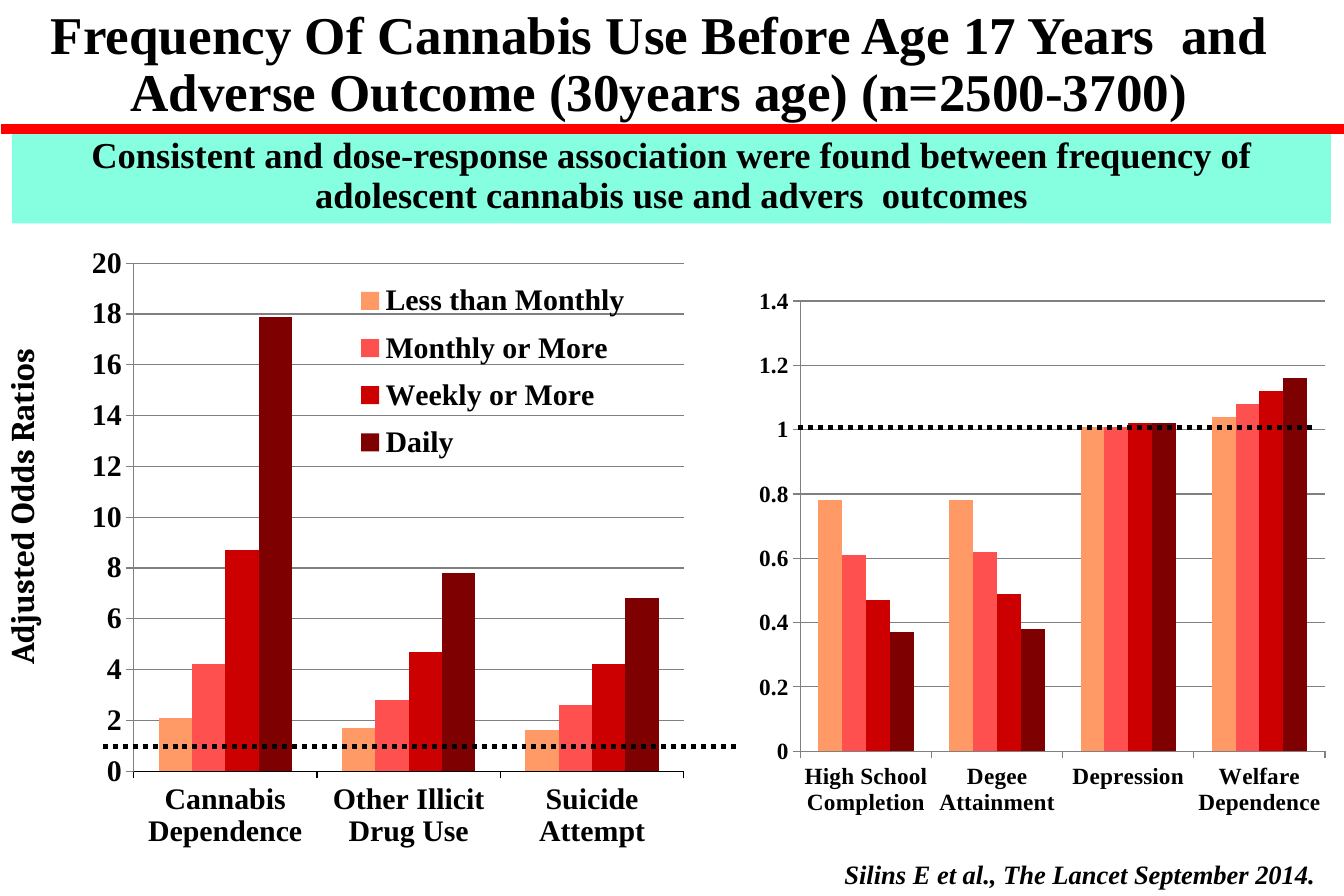
from dataclasses import dataclass

from lxml import etree
from pptx import Presentation
from pptx.chart.data import CategoryChartData
from pptx.dml.color import RGBColor
from pptx.enum.chart import XL_CHART_TYPE, XL_LEGEND_POSITION, XL_TICK_MARK
from pptx.enum.dml import MSO_LINE
from pptx.enum.shapes import MSO_CONNECTOR, MSO_SHAPE
from pptx.enum.text import MSO_ANCHOR, MSO_AUTO_SIZE, PP_ALIGN
from pptx.oxml.ns import qn
from pptx.util import Inches, Pt

COLUMNS = XL_CHART_TYPE.COLUMN_CLUSTERED
LEGEND_TOP = XL_LEGEND_POSITION.TOP
TICK_OUTSIDE = XL_TICK_MARK.OUTSIDE
DOTTED = MSO_LINE.ROUND_DOT
STRAIGHT = MSO_CONNECTOR.STRAIGHT
RECTANGLE = MSO_SHAPE.RECTANGLE
TOP = MSO_ANCHOR.TOP
FIT_SHAPE = MSO_AUTO_SIZE.SHAPE_TO_FIT_TEXT
NO_FIT = MSO_AUTO_SIZE.NONE
CENTER = PP_ALIGN.CENTER
LEFT = PP_ALIGN.LEFT


@dataclass(frozen=True)
class Theme:
    """Colours, fonts and type sizes of the slide."""
    font: str = "Times New Roman"
    axis_title_font: str = "Cambria"
    ink: RGBColor = RGBColor(0, 0, 0)
    grid: RGBColor = RGBColor(0x80, 0x80, 0x80)
    rule: RGBColor = RGBColor(0xFF, 0, 0)
    banner: RGBColor = RGBColor(0x85, 0xFF, 0xE0)
    doses: tuple = ("FF9966", "FF5050", "CC0000", "7E0000")
    title_size: int = 32
    banner_size: int = 22
    axis_title_size: int = 20
    chart_size: int = 18
    citation_size: int = 16
    small_chart_size: int = 14


class SlideBuilder:
    """Adds styled elements to one slide."""

    def __init__(self, slide, theme):
        """Keep the slide and its theme."""
        self.slide = slide
        self.theme = theme

    def set_text(self, shape, text, size, font=None, align=LEFT, spacing=None,
                 wrap=True, italic=False, fit=FIT_SHAPE):
        """Put one bold run in a shape."""
        frame = shape.text_frame
        frame.word_wrap = wrap
        frame.auto_size = fit
        frame.vertical_anchor = TOP
        paragraph = frame.paragraphs[0]
        paragraph.alignment = align
        if spacing:
            paragraph.line_spacing = spacing
        run = paragraph.add_run()
        run.text = text
        run.font.name = font or self.theme.font
        run.font.size = Pt(size)
        run.font.bold = True
        run.font.italic = italic
        run.font.color.rgb = self.theme.ink

    def title(self, box, text):
        """Place and fill the title placeholder."""
        shape = self.slide.shapes.title
        shape.left, shape.top, shape.width, shape.height = map(Inches, box)
        self.set_text(shape, text, self.theme.title_size, align=CENTER,
                      spacing=0.9, fit=NO_FIT)

    def banner(self, box, text):
        """Add the filled statement under the title."""
        shape = self.slide.shapes.add_shape(RECTANGLE, *map(Inches, box))
        shape.shadow.inherit = False
        shape.fill.solid()
        shape.fill.fore_color.rgb = self.theme.banner
        shape.line.fill.background()
        self.set_text(shape, text, self.theme.banner_size, align=CENTER,
                      spacing=0.9)

    def label(self, box, text, size, font=None, italic=False, vertical=False):
        """Add a single-line text box, upright or turned."""
        shape = self.slide.shapes.add_textbox(*map(Inches, box))
        self.set_text(shape, text, size, font, wrap=False, italic=italic)
        if vertical:
            shape.element.txBody.bodyPr.set("vert", "vert270")

    def horizontal_line(self, left, right, top, color, width, dash=None):
        """Add a level line."""
        line = self.slide.shapes.add_connector(
            STRAIGHT, Inches(left), Inches(top), Inches(right), Inches(top))
        line.line.color.rgb = color
        line.line.width = Pt(width)
        if dash:
            line.line.dash_style = dash
        etree.SubElement(line.element.spPr, qn("a:effectLst"))

    def set_layout(self, element, index, area, inner=False):
        """Fix a chart part to fractions of the chart area."""
        for old in element.findall(qn("c:layout")):
            element.remove(old)
        layout = etree.Element(qn("c:layout"))
        manual = etree.SubElement(layout, qn("c:manualLayout"))
        settings = [("layoutTarget", "inner")] if inner else []
        settings += [("xMode", "edge"), ("yMode", "edge")]
        settings += zip("xywh", map(str, area))
        for name, value in settings:
            etree.SubElement(manual, qn(f"c:{name}")).set("val", value)
        element.insert(index, layout)

    def style_axis(self, axis, size, color):
        """Format the labels, ticks and line of an axis."""
        axis.major_tick_mark = TICK_OUTSIDE
        axis.tick_labels.font.size = Pt(size)
        axis.tick_labels.font.bold = True
        axis.format.line.color.rgb = color
        axis.format.line.width = Pt(0.75)

    def column_chart(self, box, categories, series, plot_area, maximum, unit,
                     size, baseline, legend_area=None):
        """Add a clustered column chart, one colour per dose."""
        data = CategoryChartData()
        data.categories = categories
        for name, values in series:
            data.add_series(name, values)
        chart = self.slide.shapes.add_chart(COLUMNS, *map(Inches, box), data).chart
        chart.has_title = False
        chart.font.name = self.theme.font
        chart.font.size = Pt(self.theme.chart_size)
        chart.font.color.rgb = self.theme.ink
        plot = chart.plots[0]
        plot.gap_width = 150
        plot.overlap = 0
        plot.vary_by_categories = False
        for column, color in zip(plot.series, self.theme.doses):
            column.format.fill.solid()
            column.format.fill.fore_color.rgb = RGBColor.from_string(color)
        self.style_axis(chart.category_axis, size, baseline)
        value_axis = chart.value_axis
        self.style_axis(value_axis, size, self.theme.grid)
        value_axis.minimum_scale = 0
        value_axis.maximum_scale = maximum
        value_axis.major_unit = unit
        value_axis.has_major_gridlines = True
        value_axis.major_gridlines.format.line.color.rgb = self.theme.grid
        value_axis.major_gridlines.format.line.width = Pt(0.75)
        plot_element = chart.element.find(f".//{qn('c:plotArea')}")
        self.set_layout(plot_element, 0, plot_area, inner=True)
        chart.has_legend = legend_area is not None
        if legend_area:
            chart.legend.position = LEGEND_TOP
            chart.legend.include_in_layout = False
            chart.legend.font.bold = True
            chart.legend.font.size = Pt(self.theme.chart_size)
            legend = chart.element.find(f".//{qn('c:legend')}")
            self.set_layout(legend, 1, legend_area)


def main():
    """Build and save the slide."""
    presentation = Presentation()
    presentation.slide_width = Inches(11.25)
    presentation.slide_height = Inches(7.5)
    slide = presentation.slides.add_slide(presentation.slide_layouts[5])
    theme = Theme()
    builder = SlideBuilder(slide, theme)

    builder.title((-0.29, 0.02, 11.62, 1.07),
                  "Frequency Of Cannabis Use Before Age 17 Years  and "
                  "Adverse Outcome (30years age) (n=2500-3700)")
    builder.column_chart(
        (5.96, 2.33, 5.29, 4.77),
        ["High School Completion", "Degee Attainment", "Depression",
         "Welfare Dependence"],
        [("Series 1", (0.78, 0.78, 1.01, 1.04)),
         ("Series 2", (0.61, 0.62, 1.01, 1.08)),
         ("Series 3", (0.47, 0.49, 1.02, 1.12)),
         ("Series 4", (0.37, 0.38, 1.02, 1.16))],
        (0.14, 0.04, 0.83, 0.79), 1.4, 0.2, theme.small_chart_size, theme.grid)
    builder.label((-0.04, 2.93, 0.54, 2.73), "Adjusted Odds Ratios",
                  theme.axis_title_size, theme.axis_title_font, vertical=True)
    builder.column_chart(
        (0.63, 1.58, 5.42, 5.67),
        ["Cannabis Dependence", "Other Illicit Drug Use", "Suicide Attempt"],
        [("Less than Monthly", (2.1, 1.7, 1.6)),
         ("Monthly or More", (4.2, 2.8, 2.6)),
         ("Weekly or More", (8.7, 4.7, 4.2)),
         ("Daily", (17.9, 7.8, 6.8))],
        (0.09, 0.11, 0.85, 0.75), 20, 2, theme.chart_size, theme.ink,
        legend_area=(0.42, 0.12, 0.45, 0.3))
    for left, right, top in ((0.86, 6.2, 6.25), (6.68, 11.01, 3.58)):
        builder.horizontal_line(left, right, top, theme.ink, 3, DOTTED)
    builder.banner((0.1, 1.1, 11.04, 0.77),
                   "Consistent and dose-response association were found between "
                   "frequency of adolescent cannabis use and advers  outcomes")
    builder.horizontal_line(0.01, 11.26, 1.08, theme.rule, 6)
    builder.label((6.97, 7.13, 4.25, 0.37),
                  "Silins E et al., The Lancet September 2014.",
                  theme.citation_size, italic=True)
    presentation.save("out.pptx")


if __name__ == "__main__":
    main()
